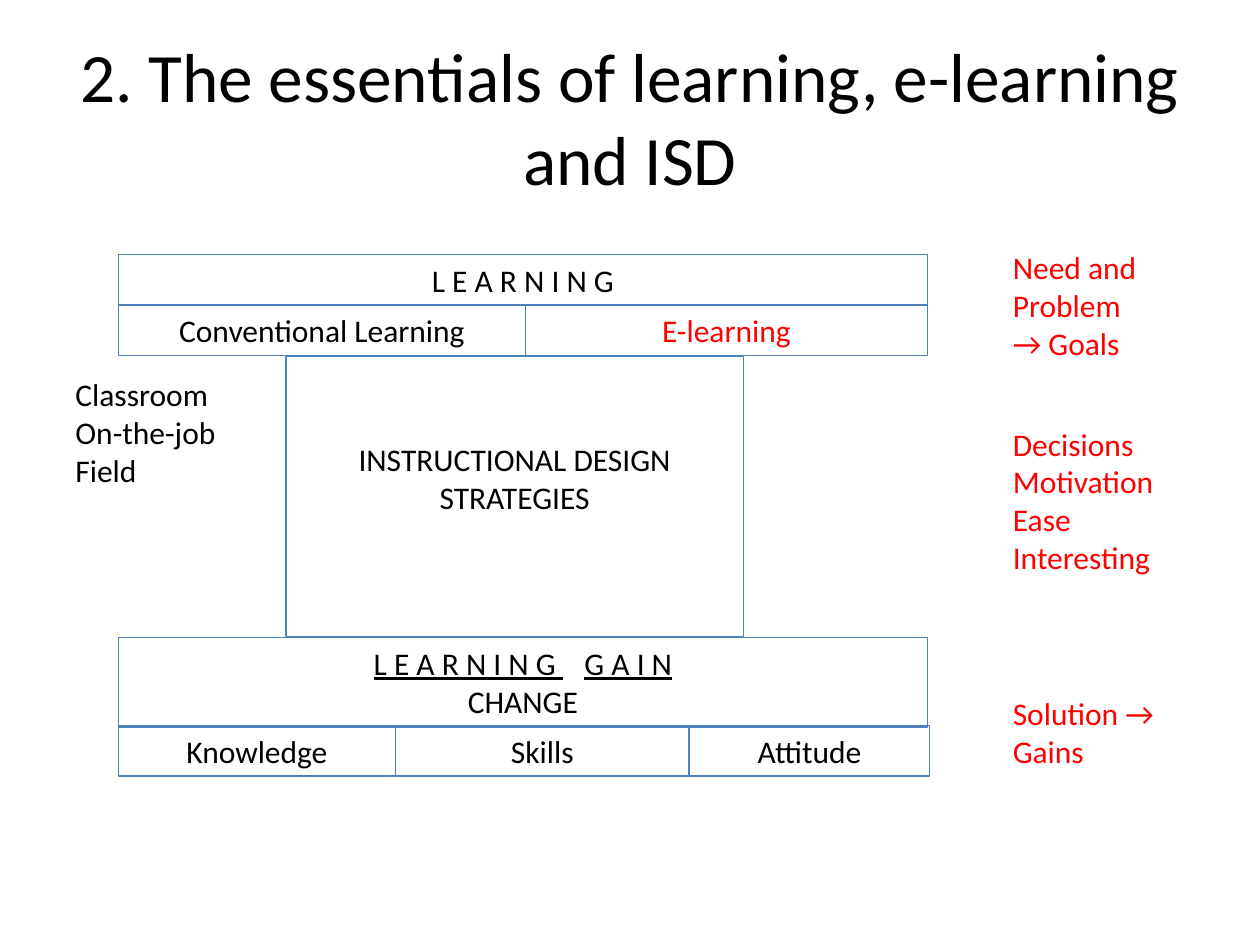
from itertools import accumulate

from pptx import Presentation
from pptx.dml.color import RGBColor
from pptx.enum.shapes import MSO_SHAPE as SHAPE
from pptx.enum.text import MSO_ANCHOR as ANCHOR, PP_ALIGN as ALIGN
from pptx.util import Inches, Pt

BLACK, RED, BLUE = "000000", "FF0000", "4F81BD"
TITLE = "2. The essentials of learning, e-learning and ISD"
LEFT, WORD_GAP = 0.94, 12.2

ROWS = [
    (2.02, 0.4, [(6.42, ["L E A R N I N G"], BLACK)]),
    (2.42, 0.4, [(3.23, ["Conventional Learning"], BLACK), (3.19, ["E-learning"], RED)]),
    (5.06, 0.71, [(6.42, [["L E A R N I N G", " ", "G A I N"], "CHANGE"], BLACK)]),
    (5.76, 0.4, [(2.2, ["Knowledge"], BLACK), (2.33, ["Skills"], BLACK),
                 (1.91, ["Attitude"], BLACK)]),
]
STRATEGIES = (2.27, 2.83, 3.63, 2.22), ["INSTRUCTIONAL DESIGN STRATEGIES"]
NOTES = [
    ((7.94, 1.92, 1.52, 1.01), ["Need and Problem", "→ Goals"], RED),
    ((7.94, 3.32, 1.52, 1.62), ["Decisions", "Motivation", "Ease", "Interesting"], RED),
    ((7.94, 5.46, 1.64, 0.71), ["Solution →", "Gains"], RED),
    ((0.5, 2.93, 1.39, 1.01), ["Classroom", "On-the-job", "Field"], BLACK),
]


def rgb(color):
    """Turn a hex string into a colour."""
    return RGBColor.from_string(color)


def write(sp, lines, color, size=18, align=ALIGN.LEFT, anchor=ANCHOR.TOP):
    """Fill a shape with paragraphs; a list of runs is underlined as a heading."""
    tf = sp.text_frame
    tf.word_wrap, tf.vertical_anchor = True, anchor
    for i, line in enumerate(lines):
        p = tf.paragraphs[0] if i == 0 else tf.add_paragraph()
        p.alignment = align
        heading = isinstance(line, list)
        for text in line if heading else [line]:
            r = p.add_run()
            r.text = text
            r.font.name, r.font.size = "Calibri", Pt(size)
            r.font.color.rgb = rgb(color)
            if heading:
                r.font.underline = True
            if text == " ":
                r._r.get_or_add_rPr().set("spc", str(round(WORD_GAP * 100)))


def add_box(s, at, lines, color=BLACK):
    """Add an outlined rectangle with centred text."""
    sp = s.shapes.add_shape(SHAPE.RECTANGLE, *map(Inches, at))
    sp.shadow.inherit = False
    sp.fill.background()
    sp.line.color.rgb, sp.line.width = rgb(BLUE), Pt(0.75)
    write(sp, lines, color, align=ALIGN.CENTER)
    return sp


def add_text(s, at, lines, color=BLACK, **style):
    """Add a plain text box."""
    write(s.shapes.add_textbox(*map(Inches, at)), lines, color, **style)


def main():
    """Build the slide."""
    prs = Presentation()
    prs.slide_width, prs.slide_height = Inches(10), Inches(7.5)
    s = prs.slides.add_slide(prs.slide_layouts[6])
    add_text(s, (0.5, 0.3, 9, 1.25), [TITLE], size=39.6,
             align=ALIGN.CENTER, anchor=ANCHOR.MIDDLE)
    for top, height, cells in ROWS:
        lefts = accumulate((width for width, *_ in cells), initial=LEFT)
        for left, (width, lines, color) in zip(lefts, cells):
            add_box(s, (left, top, width, height), lines, color)
    add_box(s, *STRATEGIES).text_frame.margin_top = Inches(0.66)
    for at, lines, color in NOTES:
        add_text(s, at, lines, color)
    prs.save("out.pptx")


if __name__ == "__main__":
    main()
